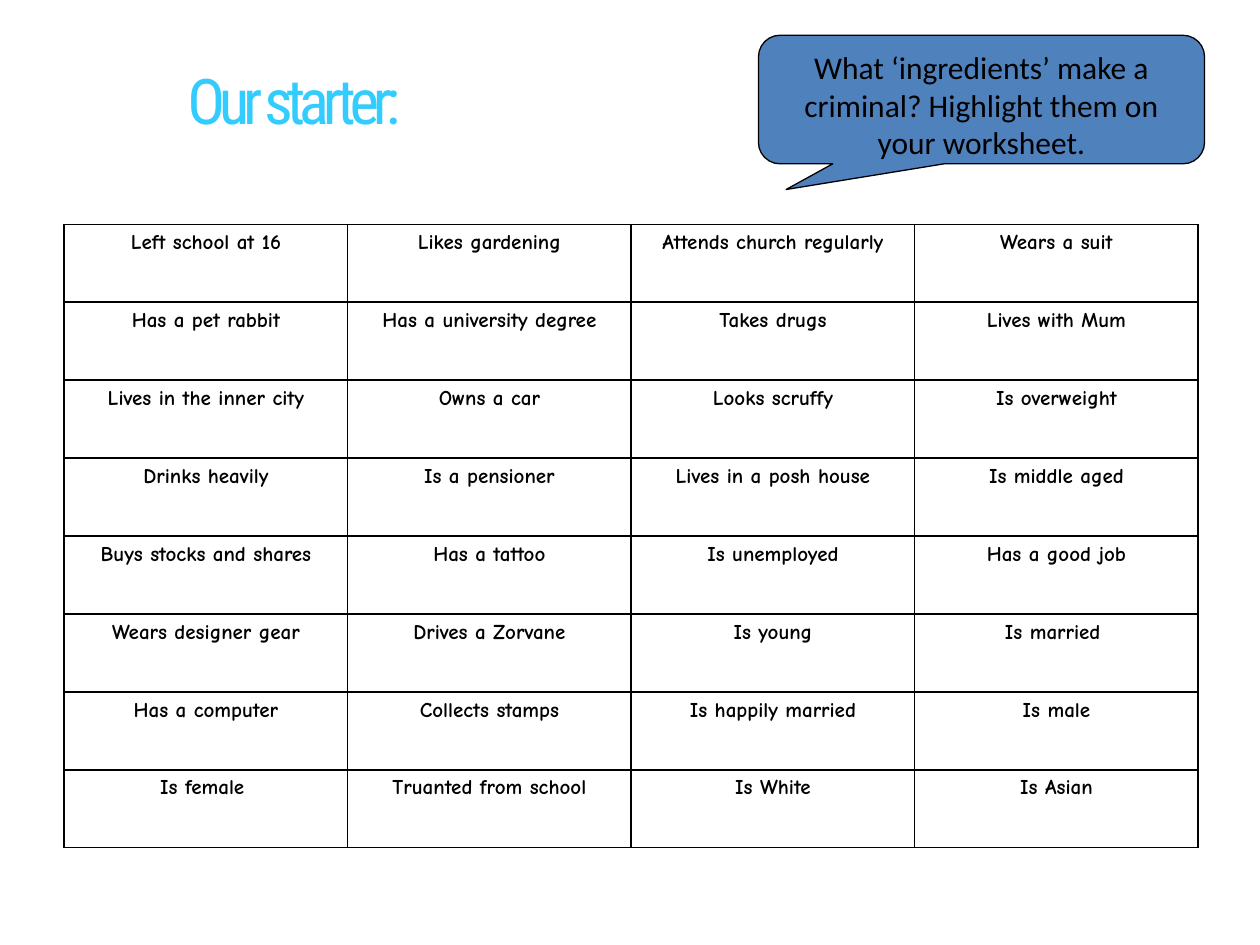
"""Builds the starter slide: a title, a question callout and a grid of traits."""
from lxml import etree
from pptx import Presentation, util as u
from pptx.dml.color import RGBColor
from pptx.enum import shapes, text
from pptx.oxml.ns import qn

TITLE = "Our starter: "
QUESTION = "What ‘ingredients’ make a criminal? Highlight them on your worksheet."
TRAITS = [
    ("Left school at 16", "Likes gardening", "Attends church regularly", "Wears a suit"),
    ("Has a pet rabbit", "Has a university degree", "Takes drugs", "Lives with Mum"),
    ("Lives in the inner city", "Owns a car", "Looks scruffy", "Is overweight"),
    ("Drinks heavily", "Is a pensioner", "Lives in a posh house", "Is middle aged"),
    ("Buys stocks and shares", "Has a tattoo", "Is unemployed", "Has a good job"),
    ("Wears designer gear", "Drives a Zorvane", "Is young", "Is married "),
    ("Has a computer", "Collects stamps", "Is happily married", "Is male"),
    ("Is female ", "Truanted from school", "Is White", "Is Asian"),
]

BLACK = RGBColor(0x00, 0x00, 0x00)
CYAN = RGBColor(0x33, 0xCC, 0xFF)
NAVY = RGBColor(0x00, 0x00, 0x99)
BLUE = RGBColor(0x4F, 0x81, 0xBD)

TITLE_BOX = (0.67, 0.44, 3.39, 0.79)
CALLOUT_BOX = (6.02, 0.28, 3.54, 1.02)
GRID_BOX = (0.51, 1.78, 9, 4.95)
CALLOUT_ADJ = (-0.438, 0.7, 0.167)
HANG = u.Inches(0.38)


def inches(box):
    return [u.Inches(v) for v in box]


def write(tf, words, size, font, color, bold=False):
    p = tf.paragraphs[0]
    p.alignment = text.PP_ALIGN.CENTER
    r = p.add_run()
    r.text = words
    r.font.size, r.font.name, r.font.bold = u.Pt(size), font, bold
    r.font.color.rgb = color
    return p, r


def add_line(parent, tag, color, width, index):
    ln = etree.Element(qn(tag), w=str(u.Pt(width)))
    fill = etree.SubElement(ln, qn("a:solidFill"))
    etree.SubElement(fill, qn("a:srgbClr"), val=str(color))
    parent.insert(index, ln)


def add_grid(s):
    rows, cols = len(TRAITS), len(TRAITS[0])
    x, y, w, h = inches(GRID_BOX)
    table = s.shapes.add_table(rows, cols, x, y, w, h).table
    table.first_row = table.horz_banding = False
    for col in table.columns:
        col.width = w // cols
    for row, traits in zip(table.rows, TRAITS):
        row.height = h // rows
        for cell, trait in zip(row.cells, traits):
            p, _ = write(cell.text_frame, trait, 12, "Comic Neue", BLACK, True)
            pPr = p._p.get_or_add_pPr()
            pPr.set("marL", str(HANG))
            pPr.set("indent", str(-HANG))
            tcPr = cell._tc.get_or_add_tcPr()
            for i, side in enumerate("LRTB"):
                add_line(tcPr, f"a:ln{side}", BLACK, 1, i)
            cell.fill.background()


def add_title(s):
    tf = s.shapes.add_textbox(*inches(TITLE_BOX)).text_frame
    tf.word_wrap = False
    _, r = write(tf, TITLE, 36, "Roboto Condensed", CYAN)
    rPr = r._r.get_or_add_rPr()
    rPr.set("spc", "-360")
    add_line(rPr, "a:ln", NAVY, 1, 0)


def add_callout(s):
    kind = shapes.MSO_SHAPE.ROUNDED_RECTANGULAR_CALLOUT
    sp = s.shapes.add_shape(kind, *inches(CALLOUT_BOX))
    for i, value in enumerate(CALLOUT_ADJ):
        sp.adjustments[i] = value
    sp.shadow.inherit = False
    sp.fill.solid()
    sp.fill.fore_color.rgb = BLUE
    sp.line.color.rgb = BLACK
    sp.line.width = u.Pt(0.75)
    tf = sp.text_frame
    tf.word_wrap = True
    tf.vertical_anchor = text.MSO_ANCHOR.TOP
    write(tf, QUESTION, 18, "Calibri", BLACK)


def main():
    prs = Presentation()
    prs.slide_width, prs.slide_height = u.Inches(10), u.Inches(7.5)
    s = prs.slides.add_slide(prs.slide_layouts[6])
    add_grid(s)
    add_title(s)
    add_callout(s)
    prs.save("out.pptx")


if __name__ == "__main__":
    main()
